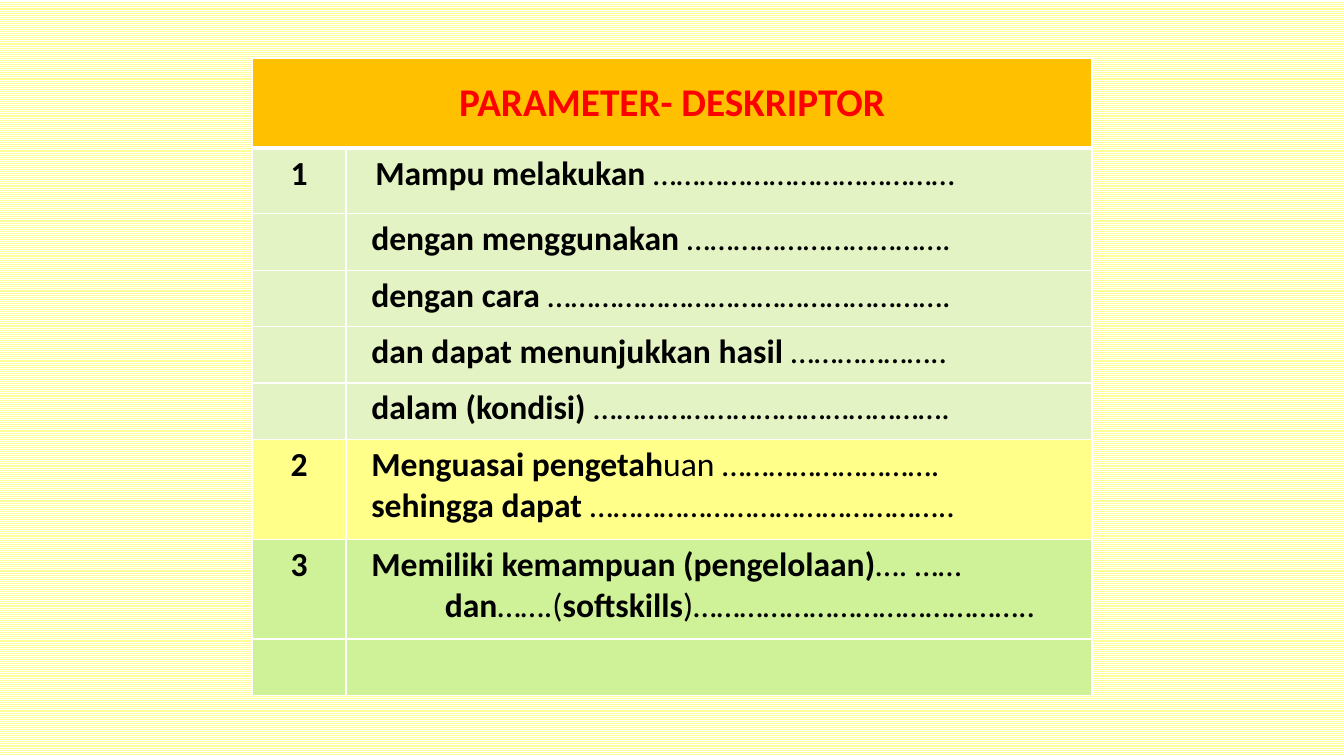
from dataclasses import dataclass

from lxml import etree
from pptx import Presentation
from pptx import util as u
from pptx.dml import color
from pptx.enum import dml, text
from pptx.oxml import ns

WIDE, HIGH = u.Inches(13.33), u.Inches(7.5)
COL, ROW = WIDE / 160, HIGH / 120
LEFT, TOP = 30, 9.28
COLS = (11.2, 88.8)
HEAD, FIRST, LINE, PAIR = 14.24, 10.4, 8.96, 15.84
GREEN, YELLOW, LIME = "E4F3C3", "FFFF89", "CFF197"


@dataclass
class Para:
    words: str
    dent: float = 1.8


@dataclass
class Item:
    high: float
    fill: str
    mark: str = ""
    paras: tuple[Para, ...] = ()


ITEMS = [
    Item(FIRST, GREEN, "1", (Para("Mampu melakukan |…………………………………", 2.28),)),
    Item(LINE, GREEN, "", (Para("dengan menggunakan |……………………………."),)),
    Item(LINE, GREEN, "", (Para("dengan cara |……………………………………………."),)),
    Item(LINE, GREEN, "", (Para("dan dapat menunjukkan hasil |……………….."),)),
    Item(LINE, GREEN, "", (Para("dalam (kondisi) |………………………………………."),)),
    Item(PAIR, YELLOW, "2", (Para("Menguasai pengetah|uan ………………………."),
                             Para("sehingga dapat |………………………………………..")) ),
    Item(PAIR, LIME, "3", (Para("Memiliki kemampuan (pengelolaan)|…. ……"),
                           Para("dan|…….(|softskills|)……………………………………..", 10.56))),
    Item(LINE, LIME),
]


def rgb(code: str) -> color.RGBColor:
    return color.RGBColor.from_string(code)


def edge(cell, foot: float = 1) -> None:
    props = cell._tc.get_or_add_tcPr()
    for side, size in zip("LRTB", (1, 1, 1, foot)):
        line = etree.SubElement(props, ns.qn(f"a:ln{side}"), w=str(u.Pt(size)))
        solid = etree.SubElement(line, ns.qn("a:solidFill"))
        etree.SubElement(solid, ns.qn("a:srgbClr"), val="FFFFFF")


def paint(cell, code: str, foot: float = 1) -> None:
    edge(cell, foot)
    cell.fill.solid()
    cell.fill.fore_color.rgb = rgb(code)


def put(para, words: str, *, size: float = 24, ink: str = "000000",
        align=text.PP_ALIGN.LEFT, dent: float = 0) -> None:
    para.alignment = align
    if dent:
        para._p.get_or_add_pPr().set("marL", str(round(dent * COL)))
    for spot, part in enumerate(words.split("|")):
        run = para.add_run()
        run.text = part
        run.font.name = "Calibri"
        run.font.size = u.Pt(size)
        run.font.bold = spot % 2 == 0
        run.font.color.rgb = rgb(ink)


def fill_row(table, row: int, item: Item) -> None:
    table.rows[row].height = round(item.high * ROW)
    mark, body = table.cell(row, 0), table.cell(row, 1)
    for cell in (mark, body):
        paint(cell, item.fill)
    if item.mark:
        put(mark.text_frame.paragraphs[0], item.mark, align=text.PP_ALIGN.CENTER)
    frame = body.text_frame
    for spot, para in enumerate(item.paras):
        line = frame.add_paragraph() if spot else frame.paragraphs[0]
        put(line, para.words, dent=para.dent)


def main() -> None:
    deck = Presentation()
    deck.slide_width, deck.slide_height = WIDE, HIGH
    slide = deck.slides.add_slide(deck.slide_layouts[6])

    back = slide.background.fill
    back.patterned()
    back.pattern = dml.MSO_PATTERN.LIGHT_HORIZONTAL
    back.fore_color.rgb = rgb("FFFF99")
    back.back_color.rgb = rgb("FFFFFF")

    high = HEAD + sum(item.high for item in ITEMS)
    table = slide.shapes.add_table(
        len(ITEMS) + 1, len(COLS), round(LEFT * COL), round(TOP * ROW),
        round(sum(COLS) * COL), round(high * ROW)).table
    table.first_row = table.horz_banding = False
    for col, wide in zip(table.columns, COLS):
        col.width = round(wide * COL)

    table.rows[0].height = round(HEAD * ROW)
    head = table.cell(0, 0)
    head.merge(table.cell(0, 1))
    for cell in (head, table.cell(0, 1)):
        paint(cell, "FFC000", 3)
    head.vertical_anchor = text.MSO_ANCHOR.MIDDLE
    put(head.text_frame.paragraphs[0], "PARAMETER- DESKRIPTOR",
        size=28, ink="FF0000", align=text.PP_ALIGN.CENTER)

    for row, item in enumerate(ITEMS, 1):
        fill_row(table, row, item)
    deck.save("out.pptx")


if __name__ == "__main__":
    main()
